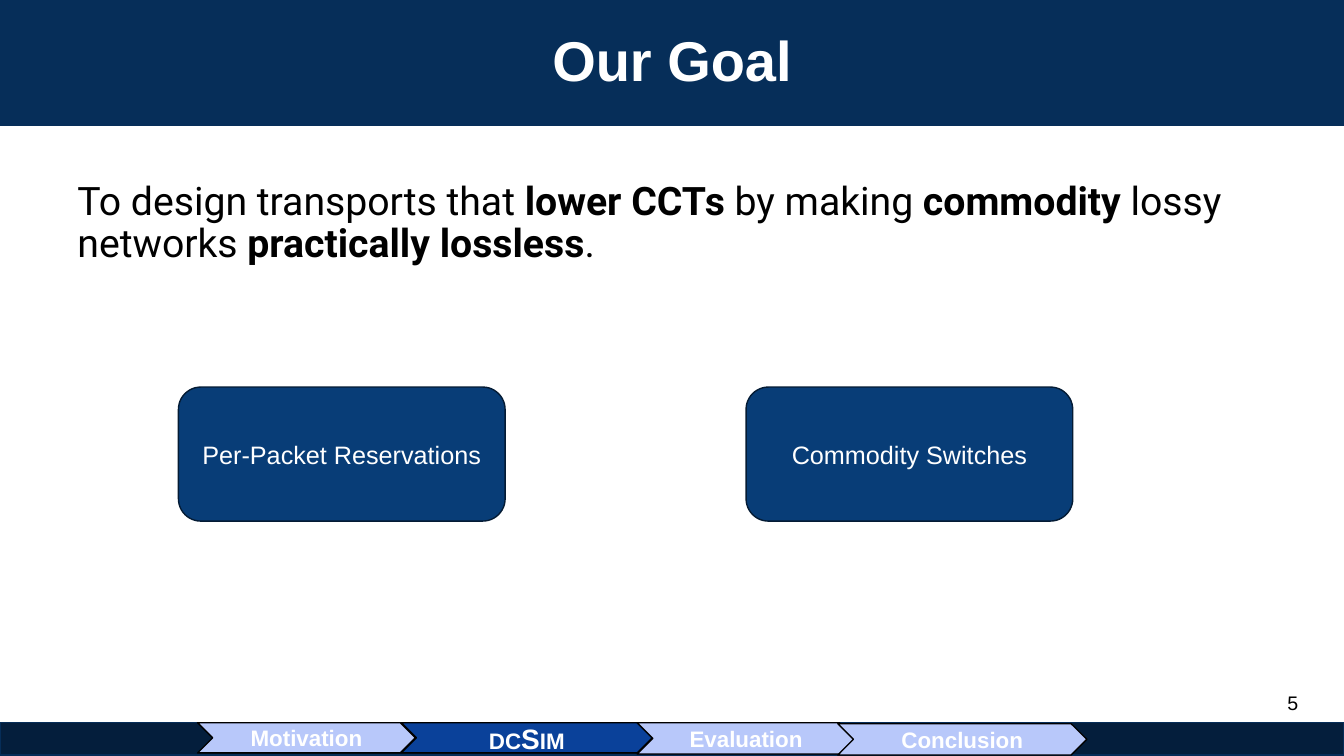
from pptx import Presentation
from pptx.dml.color import RGBColor
from pptx.enum.shapes import MSO_SHAPE as Preset
from pptx.enum.text import MSO_ANCHOR as Anchor, PP_ALIGN as Align
from pptx.util import Inches, Pt

COLORS = {
    "title": "062E59", "box": "083D77", "box_line": "041B34",
    "bar": "041E3C", "bar_line": "062D58", "step": "B8C8FA",
    "current": "0A419A", "white": "FFFFFF", "black": "000000",
}


def style_font(font, size, color, bold=False, name="Arial"):
    font.name, font.size, font.bold = name, Pt(size), bold
    font.color.rgb = RGBColor.from_string(COLORS[color])


def add_block(preset, place, fill, line, runs=(), size=18, bold=False):
    """Add a filled shape with centred white text; runs are (text, own size) pairs."""
    block = page.shapes.add_shape(preset, *map(Inches, place))
    block.shadow.inherit = False
    block.fill.solid()
    block.fill.fore_color.rgb = RGBColor.from_string(COLORS[fill])
    block.line.color.rgb = RGBColor.from_string(COLORS[line])
    block.line.width = Pt(1)
    frame = block.text_frame
    frame.vertical_anchor = Anchor.MIDDLE
    para = frame.paragraphs[0]
    para.alignment = Align.CENTER
    style_font(para.font, size, "white", bold)
    for text, own_size in runs:
        span = para.add_run()
        span.text = text
        if own_size:
            span.font.size = Pt(own_size)
    return block


deck = Presentation()
deck.slide_width, deck.slide_height = Inches(13.33), Inches(7.5)
page = deck.slides.add_slide(deck.slide_layouts[5])

# Title band
title = page.shapes.title
title.left, title.top, title.width, title.height = map(Inches, (0, 0, 13.33, 1.25))
title.fill.solid()
title.fill.fore_color.rgb = RGBColor.from_string(COLORS["title"])
title.text_frame.text = "Our Goal"
title.text_frame.vertical_anchor = Anchor.MIDDLE
para = title.text_frame.paragraphs[0]
para.alignment, para.line_spacing = Align.CENTER, 0.9
style_font(para.font, 40, "white", bold=True)

# Goal statement, alternating plain and bold
goal = page.shapes.add_textbox(*map(Inches, (0.67, 1.75, 12, 4.95)))
goal.text_frame.word_wrap = True
para = goal.text_frame.paragraphs[0]
para.line_spacing = 0.9
style_font(para.font, 28, "black", name="Roboto")
statement = ["To design transports that ", "lower CCTs ", "by making ", "commodity",
             " lossy networks ", "practically lossless", "."]
for index, text in enumerate(statement):
    span = para.add_run()
    span.text = text
    span.font.bold = index % 2 == 1

# Two ingredients
for left, label in [(1.77, "Per-Packet Reservations"), (7.4, "Commodity Switches")]:
    add_block(Preset.ROUNDED_RECTANGLE, (left, 3.84, 3.24, 1.33),
              "box", "box_line", [(label, None)])

# Progress bar
add_block(Preset.RECTANGLE, (0, 7.17, 13.33, 0.32), "bar", "bar_line")
steps = [
    (1.96, 7.17, 2.16, 0.3, "step", [("Motivation", None)]),
    (3.98, 7.17, 2.49, 0.3, "current", [("DC", None), ("S", 20), ("IM", None)]),
    (6.32, 7.17, 2.16, 0.31, "step", [("Evaluation", None)]),
    (8.31, 7.18, 2.47, 0.31, "step", [("Conclusion", None)]),
]
for *place, fill, runs in steps:
    step = add_block(Preset.CHEVRON, place, fill, "black", runs, size=16, bold=True)
    frame = step.text_frame
    frame.margin_left = frame.margin_right = 0
    frame.margin_top = frame.margin_bottom = 0

# Page number
number = page.shapes.add_textbox(*map(Inches, (12.67, 6.81, 0.67, 0.52)))
number.text_frame.word_wrap = True
number.text_frame.text = "5"
style_font(number.text_frame.paragraphs[0].font, 14, "black")

deck.save("out.pptx")
